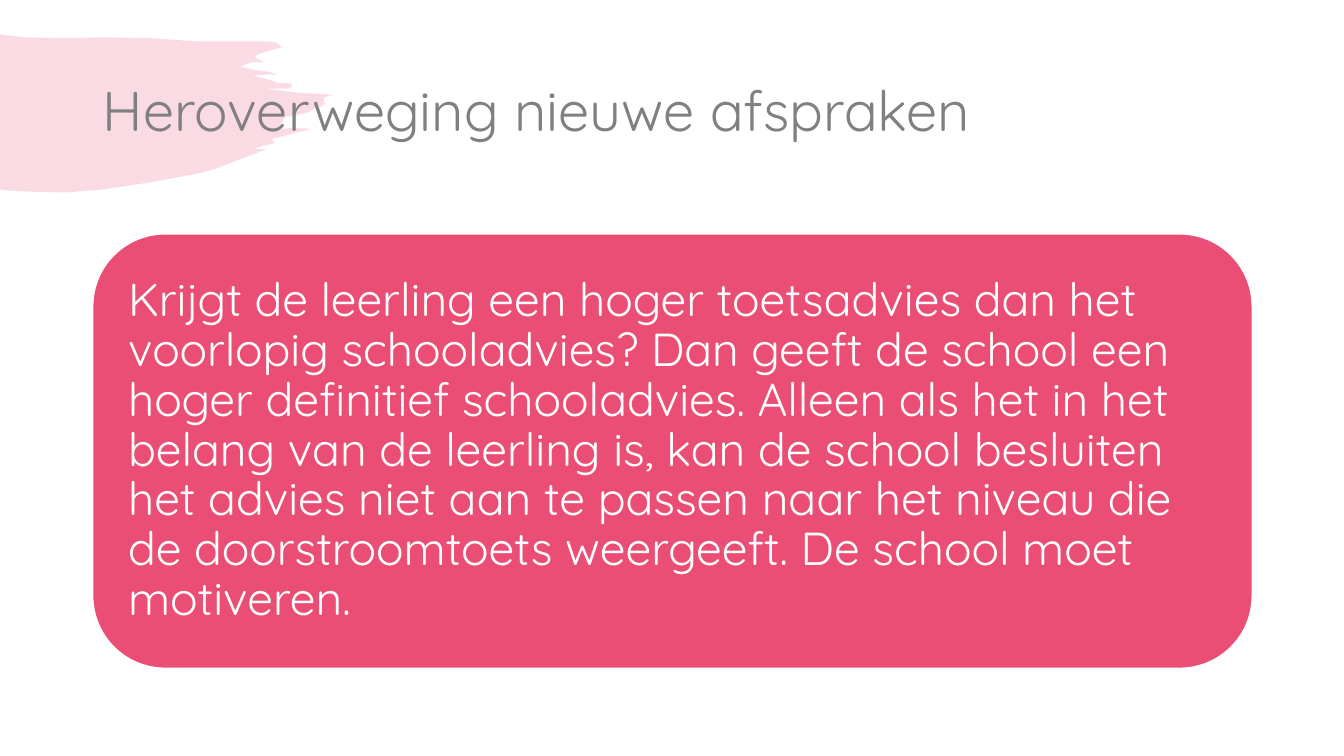
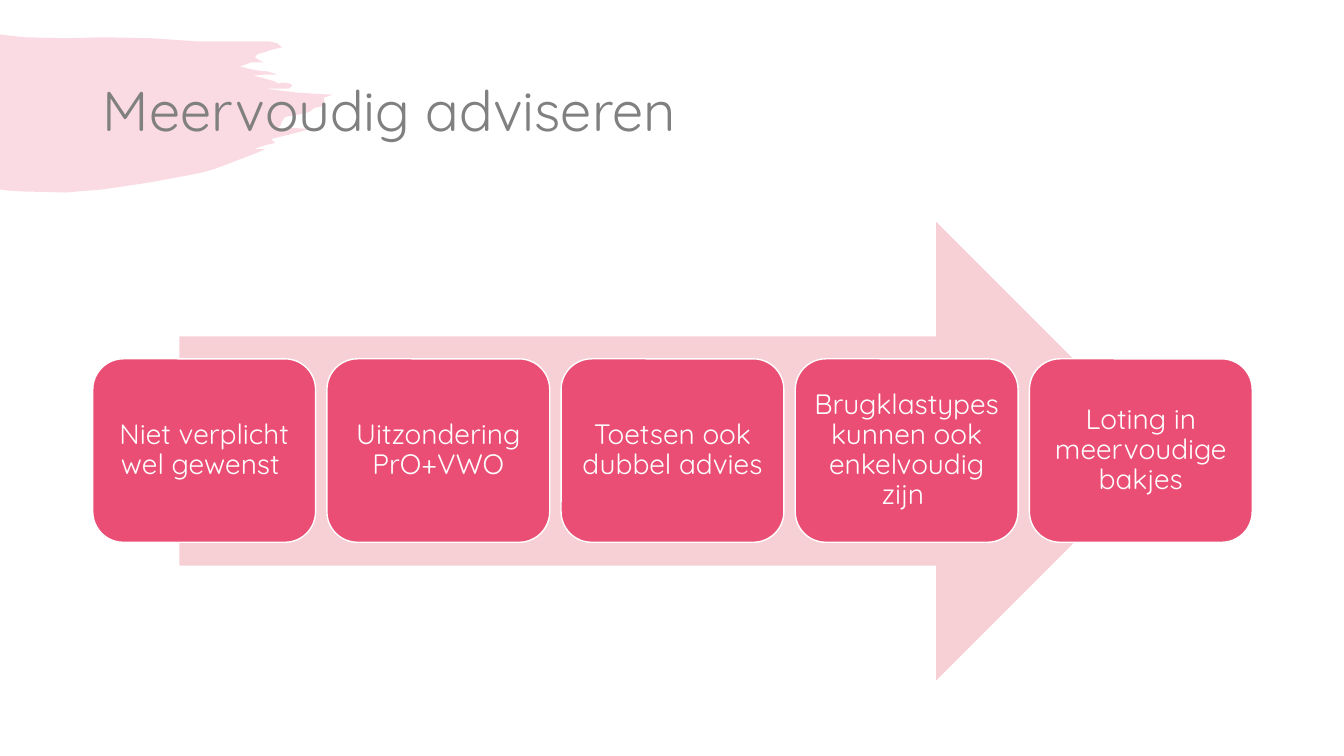
from lxml.etree import SubElement
from pptx import Presentation
from pptx.dml.color import RGBColor
from pptx.enum.shapes import MSO_SHAPE
from pptx.enum.text import MSO_ANCHOR, PP_ALIGN
from pptx.oxml.ns import qn
from pptx.util import Inches, Pt

PINK, PALE_PINK, GREY, WHITE = "EB4E74", "F7D0D6", "808080", "FFFFFF"
FONT = "Quicksand"

AGREEMENT_TITLE = "Heroverweging nieuwe afspraken"
AGREEMENT = (
    "Krijgt de leerling een hoger toetsadvies dan het voorlopig schooladvies? "
    "Dan geeft de school een hoger definitief schooladvies. Alleen als het in het "
    "belang van de leerling is, kan de school besluiten het advies niet aan te passen "
    "naar het niveau die de doorstroomtoets weergeeft. De school moet motiveren."
)
ADVICE_TITLE = "Meervoudig adviseren"
ADVICE_STEPS = [
    "Niet verplicht wel gewenst ",
    "Uitzondering PrO+VWO",
    "Toetsen ook dubbel advies",
    "Brugklastypes kunnen ook enkelvoudig zijn ",
    "Loting in meervoudige bakjes",
]

LEFT, CONTENT_WIDTH = 0.92, 11.5
STEP_WIDTH, STEP_HEIGHT, STEP_TOP = 2.21, 1.82, 3.56
BRUSH_OUTLINE = [
    (0, 34), (6, 35), (25, 37), (66, 38), (102, 37), (151, 38), (194, 41), (248, 41),
    (267, 41), (275, 43), (280, 47), (271, 49), (255, 54), (253, 57), (256, 59),
    (262, 62), (249, 62), (238, 66), (246, 68), (256, 70), (266, 71), (275, 74),
    (263, 74), (251, 75), (263, 78), (273, 81), (276, 83), (280, 82), (288, 83),
    (290, 85), (287, 88), (284, 88), (263, 88), (296, 92), (330, 94), (321, 97),
    (322, 103), (318, 106), (312, 107), (307, 111), (300, 113), (283, 116),
    (280, 120), (278, 125), (274, 128), (291, 127), (308, 128), (289, 133),
    (269, 138), (273, 142), (263, 144), (252, 148), (263, 148), (254, 152),
    (233, 160), (212, 168), (197, 172), (149, 181), (102, 188), (65, 191),
    (23, 190), (7, 189), (0, 188),
]


def color(hex_code):
    return RGBColor.from_string(hex_code)


def paint(shape, fill, line=None):
    shape.shadow.inherit = False
    shape.fill.solid()
    shape.fill.fore_color.rgb = color(fill)
    if line:
        shape.line.color.rgb = color(line)
        shape.line.width = Pt(1)
    else:
        shape.line.fill.background()


def write(frame, text, size, text_color, align=PP_ALIGN.LEFT):
    frame.word_wrap = True
    frame.vertical_anchor = MSO_ANCHOR.MIDDLE
    paragraph = frame.paragraphs[0]
    paragraph.alignment = align
    paragraph.line_spacing = 0.9
    run = paragraph.add_run()
    run.text = text
    run.font.name = FONT
    run.font.size = Pt(size)
    run.font.color.rgb = color(text_color)


def add_titled_slide(deck, title):
    slide = deck.slides.add_slide(deck.slide_layouts[5])
    heading = slide.shapes.title
    heading.left, heading.top = Inches(LEFT), Inches(0.4)
    heading.width, heading.height = Inches(CONTENT_WIDTH), Inches(1.45)
    write(heading.text_frame, title, 40, GREY)
    return slide


def add_block(slide, preset, left, top, width, height, fill, line=None):
    block = slide.shapes.add_shape(
        preset, Inches(left), Inches(top), Inches(width), Inches(height))
    paint(block, fill, line)
    return block


def add_card(slide, box, text, size, inset, align=PP_ALIGN.LEFT):
    card = add_block(slide, MSO_SHAPE.ROUNDED_RECTANGLE, *box, PINK, WHITE)
    frame = card.text_frame
    frame.margin_left = frame.margin_right = Inches(inset)
    frame.margin_top = frame.margin_bottom = Inches(inset)
    write(frame, text, size, WHITE, align)


def move_brush_to_layout(slide):
    start, *rest = BRUSH_OUTLINE
    builder = slide.shapes.build_freeform(*start, scale=Inches(0.01))
    builder.add_line_segments(rest, close=True)
    brush = builder.convert_to_shape()
    paint(brush, PINK)
    fill_color = brush.element.spPr.find(qn("a:solidFill"))[0]
    SubElement(fill_color, qn("a:alpha")).set("val", "20000")
    slide.slide_layout.shapes.element.insert(2, brush.element)


def main():
    deck = Presentation()
    deck.slide_width, deck.slide_height = Inches(13.33), Inches(7.5)

    agreement = add_titled_slide(deck, AGREEMENT_TITLE)
    move_brush_to_layout(agreement)
    add_card(agreement, (LEFT, 2.32, CONTENT_WIDTH, 4.31), AGREEMENT, 33, 0.14)

    advice = add_titled_slide(deck, ADVICE_TITLE)
    add_block(advice, MSO_SHAPE.RIGHT_ARROW, 1.78, 2.2, 9.78, 4.55, PALE_PINK)
    pitch = (CONTENT_WIDTH - STEP_WIDTH) / (len(ADVICE_STEPS) - 1)
    for index, step in enumerate(ADVICE_STEPS):
        box = (LEFT + index * pitch, STEP_TOP, STEP_WIDTH, STEP_HEIGHT)
        add_card(advice, box, step, 20, 0.08, PP_ALIGN.CENTER)

    deck.save("out.pptx")


if __name__ == "__main__":
    main()
